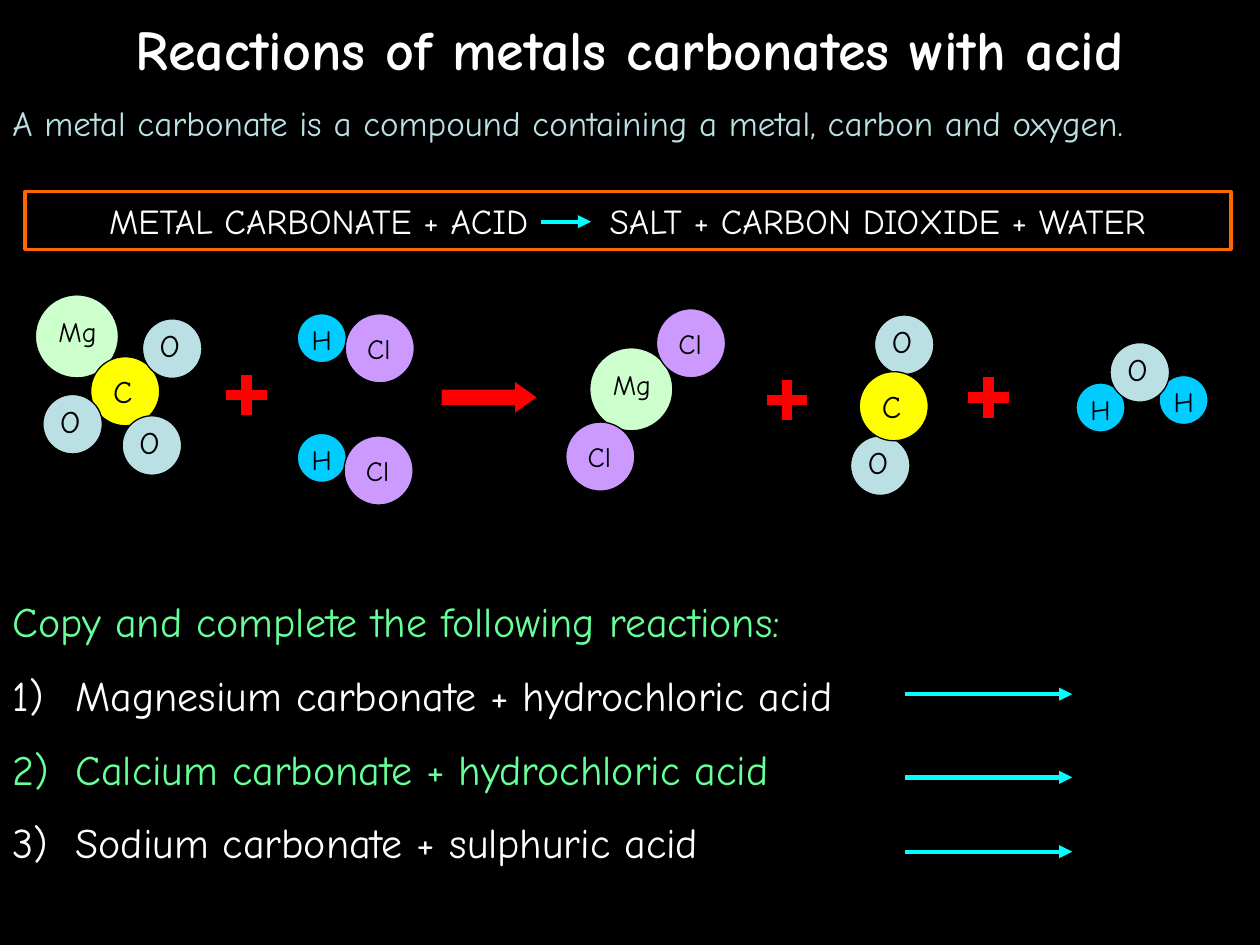
import pptx
import pptx.util
import pptx.dml.color
import pptx.enum.shapes
import pptx.enum.text
import pptx.oxml
import pptx.oxml.ns

Pt = pptx.util.Pt
SHAPES = pptx.enum.shapes.MSO_SHAPE
ALIGN = pptx.enum.text.PP_ALIGN
ANCHOR = pptx.enum.text.MSO_ANCHOR
FONT = "Comic Neue"
WHITE, BLACK, RED, CYAN, GREEN = "FFFFFF", "000000", "FF0000", "00FFFF", "66FF99"

# symbol: diameter, fill, label offset, label size, font size, alignment
ATOMS = {
    "Mg": (47.5, "CCFFCC", (4.3, 7.8), (39.6, 26.6), 16, ALIGN.CENTER),
    "H": (28, "00CCFF", (-5.8, 1.6), (39.6, 26.6), 16, ALIGN.CENTER),
    "Cl": (39.5, "CC99FF", (-0.6, 6.5), (39.6, 26.6), 16, ALIGN.CENTER),
    "C": (39.5, "FFFF00", (5.8, 5), (33.8, 28.8), 18, ALIGN.LEFT),
    "O": (34, "BBE0E3", (2.8, 0.7), (23, 28.8), 18, ALIGN.LEFT),
}

MOLECULES = [
    [("Mg", 20.2, 168.5), ("C", 51.8, 203.8), ("O", 69.8, 237.6), ("O", 81.4, 182.2), ("O", 24.5, 225.4)],
    [("H", 169.9, 179.3), ("Cl", 197.3, 179.3)],
    [("H", 169.9, 247.7), ("Cl", 196.6, 249.1)],
    [("Mg", 337, 198.7), ("Cl", 375.1, 176.4), ("Cl", 323.3, 241.2)],
    [("O", 486, 249.1), ("O", 499.7, 180), ("C", 491, 212.4)],
    [("H", 662.4, 214.6), ("H", 614.9, 218.9), ("O", 634.3, 195.8)],
]


def color(value):
    """Return a colour from its hex string."""
    return pptx.dml.color.RGBColor.from_string(value)


def add_xml(parent, tag, **attributes):
    """Append a drawing element with attributes and return it."""
    element = pptx.oxml.parse_xml(f"<a:{tag} {pptx.oxml.ns.nsdecls('a')}/>")
    for name, value in attributes.items():
        element.set(name, str(value))
    parent.append(element)
    return element


def write(paragraph, text, size=20, fill=WHITE, bold=False, align=ALIGN.LEFT, before=0):
    """Write formatted text into a paragraph."""
    paragraph.alignment = align
    paragraph.space_before = Pt(before)
    run = paragraph.add_run()
    run.text = text
    run.font.name = FONT
    run.font.size = Pt(size)
    run.font.bold = bold
    run.font.color.rgb = color(fill)


def add_text_box(slide, left, top, width, height):
    """Add a wrapping text box and return its text frame."""
    frame = slide.shapes.add_textbox(Pt(left), Pt(top), Pt(width), Pt(height)).text_frame
    frame.word_wrap = True
    return frame


def add_shape(slide, kind, left, top, width, height, fill=None, line=BLACK, line_width=0.75):
    """Add a flat preset shape."""
    shape = slide.shapes.add_shape(kind, Pt(left), Pt(top), Pt(width), Pt(height))
    shape.shadow.inherit = False
    if fill:
        shape.fill.solid()
        shape.fill.fore_color.rgb = color(fill)
    else:
        shape.fill.background()
    shape.line.color.rgb = color(line)
    shape.line.width = Pt(line_width)
    return shape


def add_arrow(slide, left, right, y):
    """Add a horizontal arrow pointing right."""
    arrow = slide.shapes.add_connector(
        pptx.enum.shapes.MSO_CONNECTOR.STRAIGHT, Pt(left), Pt(y), Pt(right), Pt(y))
    arrow.line.color.rgb = color(CYAN)
    arrow.line.width = Pt(2.5)
    add_xml(arrow.line._get_or_add_ln(), "tailEnd", type="triangle")
    add_xml(arrow._element.spPr, "effectLst")


def add_atom(slide, symbol, left, top):
    """Add a coloured atom with its symbol."""
    diameter, fill, (shift_x, shift_y), label_size, size, align = ATOMS[symbol]
    add_shape(slide, SHAPES.OVAL, left, top, diameter, diameter, fill)
    frame = add_text_box(slide, left + shift_x, top + shift_y, *label_size)
    write(frame.paragraphs[0], symbol, size=size, fill=BLACK, align=align)


def add_title(slide, text):
    """Place and fill the title."""
    title = slide.shapes.title
    title.left, title.top, title.width, title.height = Pt(0), Pt(0), Pt(720), Pt(54.7)
    title.text_frame.vertical_anchor = ANCHOR.MIDDLE
    write(title.text_frame.paragraphs[0], text, size=32, bold=True, align=ALIGN.CENTER)


def add_word_equation(slide):
    """Add the framed general equation with its arrow."""
    frame = add_shape(slide, SHAPES.RECTANGLE, 14.4, 109.4, 689, 33.1,
                      line="FF6600", line_width=2).text_frame
    frame.margin_left = Pt(48)
    paragraph = frame.paragraphs[0]
    write(paragraph, "METAL CARBONATE + ACID\tSALT + CARBON DIOXIDE + WATER")
    tabs = add_xml(paragraph._p.get_or_add_pPr(), "tabLst")
    add_xml(tabs, "tab", pos=Pt(286), algn="l")
    add_arrow(slide, 308.9, 337.7, 126.7)


def add_exercise(slide):
    """Add the numbered reactions to complete."""
    frame = add_text_box(slide, 0, 337, 678.2, 165.6)
    write(frame.paragraphs[0], "Copy and complete the following reactions:", size=24, fill=GREEN)
    reactions = [
        ("Magnesium carbonate + hydrochloric acid", WHITE, 396.7),
        ("Calcium carbonate + hydrochloric acid", GREEN, 444.2),
        ("Sodium carbonate + sulphuric acid", WHITE, 486.7),
    ]
    for text, fill, arrow_y in reactions:
        paragraph = frame.add_paragraph()
        write(paragraph, text, size=24, fill=fill, before=13.3)
        properties = paragraph._p.get_or_add_pPr()
        properties.set("marL", str(Pt(36)))
        properties.set("indent", str(Pt(-36)))
        add_xml(properties, "buFont", typeface=FONT)
        add_xml(properties, "buAutoNum", type="arabicParenR")
        add_arrow(slide, 517, 612.7, arrow_y)


def add_reaction(slide):
    """Add the molecules with the signs between them."""
    for molecule in MOLECULES:
        for symbol, left, top in molecule:
            add_atom(slide, symbol, left, top)
    for left, top in [(128.9, 213.8), (437.8, 216.7), (553, 215.3)]:
        plus = add_shape(slide, SHAPES.CROSS, left, top, 23.8, 23.8, RED)
        plus.adjustments[0] = 0.36
    arrow = add_shape(slide, SHAPES.RIGHT_ARROW, 252, 217.4, 55.4, 19.4, RED)
    arrow.adjustments[0], arrow.adjustments[1] = 0.5, 0.7


def main():
    """Build and save the slide."""
    presentation = pptx.Presentation()
    presentation.slide_width, presentation.slide_height = Pt(720), Pt(540)
    slide = presentation.slides.add_slide(presentation.slide_layouts[5])
    slide.background.fill.solid()
    slide.background.fill.fore_color.rgb = color(BLACK)
    add_title(slide, "Reactions of metals carbonates with acid")
    introduction = add_text_box(slide, 0, 54.7, 720, 31)
    write(introduction.paragraphs[0],
          "A metal carbonate is a compound containing a metal, carbon and oxygen.", fill="BBE0E3")
    add_word_equation(slide)
    add_exercise(slide)
    add_reaction(slide)
    presentation.save("out.pptx")


if __name__ == "__main__":
    main()
